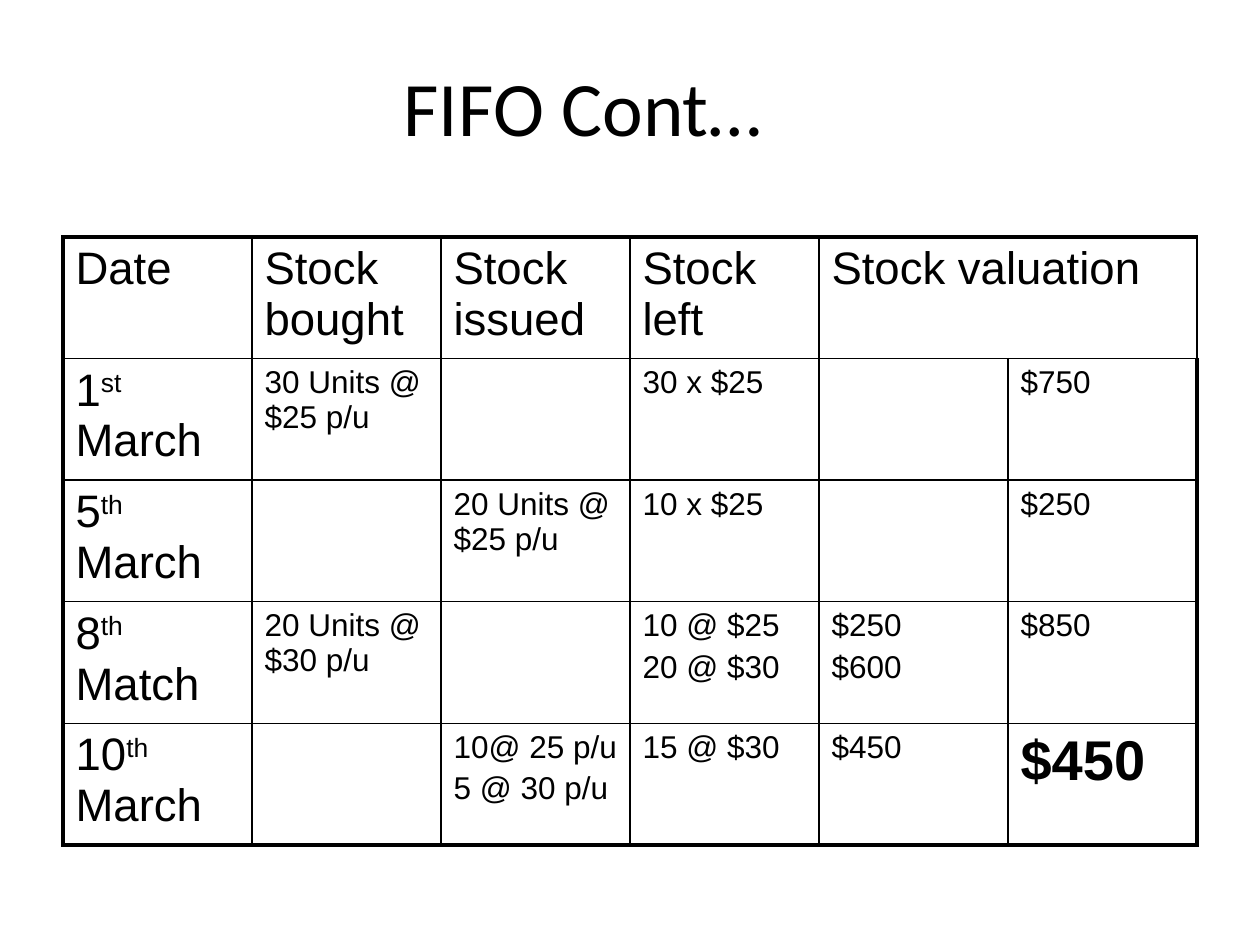
"""Build the FIFO stock valuation slide."""
from dataclasses import dataclass

from lxml.etree import SubElement
from pptx import Presentation
from pptx.dml.color import RGBColor
from pptx.enum.text import MSO_ANCHOR, PP_ALIGN
from pptx.oxml import parse_xml
from pptx.oxml.ns import nsdecls, qn
from pptx.table import Table, _Cell
from pptx.util import Cm, Pt

BLACK = RGBColor(0x00, 0x00, 0x00)
COLUMN_WIDTH = Cm(3.81)
ROW_HEIGHT = Cm(2.45)
OUTER_LINE = Pt(2.25)
INNER_LINE = Pt(1)
HEADING_SIZE = 26
HEADINGS = ["Date", "Stock bought", "Stock issued", "Stock left", "Stock valuation", ""]


@dataclass(frozen=True)
class StockEntry:
    day: str
    suffix: str
    month: str
    bought: str = ""
    issued: str = ""
    left: str = ""
    subtotals: str = ""
    total: str = ""


ENTRIES = [
    StockEntry("1", "st", "March", bought="30 Units @ $25 p/u", left="30 x $25", total="$750"),
    StockEntry("5", "th", "March", issued="20 Units @ $25 p/u", left="10 x $25", total="$250"),
    StockEntry("8", "th", "Match", bought="20 Units @ $30 p/u", left="10 @ $25\n20 @ $30",
               subtotals="$250\n$600", total="$850"),
    StockEntry("10", "th", "March", issued="10@ 25 p/u\n5 @ 30 p/u", left="15 @ $30",
               subtotals="$450", total="$450"),
]


def add_span(para, text: str, *, size: float = 18, font: str = "Arial",
             bold: bool = False, baseline: int = 0) -> None:
    span = para.add_run()
    span.text = text
    span.font.name = font
    span.font.size = Pt(size)
    span.font.bold = bold
    span.font.color.rgb = BLACK
    if baseline:
        span.font._element.set("baseline", str(baseline * 1000))


def space_before(para, percent: int) -> None:
    spacing = SubElement(para._p.get_or_add_pPr(), qn("a:spcBef"))
    SubElement(spacing, qn("a:spcPct")).set("val", str(percent * 1000))


def write_cell(cell: _Cell, text: str, size: float = 18, bold: bool = False) -> None:
    if not text:
        return
    frame = cell.text_frame
    for index, line in enumerate(text.split("\n")):
        para = frame.add_paragraph() if index else frame.paragraphs[0]
        space_before(para, 20)
        add_span(para, line, size=size, bold=bold)


def write_date(cell: _Cell, entry: StockEntry) -> None:
    para = cell.text_frame.paragraphs[0]
    space_before(para, 20)
    add_span(para, entry.day, size=HEADING_SIZE)
    add_span(para, entry.suffix, size=HEADING_SIZE, baseline=30)
    add_span(para, f" {entry.month}", size=HEADING_SIZE)


def draw_borders(table: Table) -> None:
    last_row, last_column = len(table.rows) - 1, len(table.columns) - 1
    for row in range(last_row + 1):
        for column in range(last_column + 1):
            cell = table.cell(row, column)
            cell.fill.background()
            outer_sides = {"L": column == 0, "R": column == last_column,
                           "T": row == 0, "B": row == last_row}
            for index, (side, is_outer) in enumerate(outer_sides.items()):
                width = OUTER_LINE if is_outer else INNER_LINE
                border = parse_xml(
                    f'<a:ln{side} {nsdecls("a")} w="{int(width)}"><a:solidFill>'
                    f'<a:srgbClr val="{BLACK}"/></a:solidFill></a:ln{side}>')
                cell._tc.get_or_add_tcPr().insert(index, border)


def add_stock_table(page) -> None:
    row_count, column_count = len(ENTRIES) + 1, len(HEADINGS)
    table = page.shapes.add_table(row_count, column_count, Cm(1.27), Cm(4.78),
                                  COLUMN_WIDTH * column_count, ROW_HEIGHT * row_count).table
    table.first_row = table.horz_banding = False
    for column in table.columns:
        column.width = COLUMN_WIDTH
    for row in table.rows:
        row.height = ROW_HEIGHT
    draw_borders(table)
    table.cell(0, 4).merge(table.cell(0, 5))
    for column, heading in enumerate(HEADINGS):
        write_cell(table.cell(0, column), heading, size=HEADING_SIZE)
    for row, entry in enumerate(ENTRIES, start=1):
        write_date(table.cell(row, 0), entry)
        texts = (entry.bought, entry.issued, entry.left, entry.subtotals)
        for column, text in enumerate(texts, start=1):
            write_cell(table.cell(row, column), text)
        is_final = entry is ENTRIES[-1]
        write_cell(table.cell(row, 5), entry.total, size=32 if is_final else 18, bold=is_final)


def add_title(page, text: str) -> None:
    box = page.shapes.title
    box.left, box.top, box.width, box.height = Cm(1.27), Cm(0.33), Cm(20.96), Cm(3.61)
    box.text_frame.vertical_anchor = MSO_ANCHOR.MIDDLE
    para = box.text_frame.paragraphs[0]
    para.alignment = PP_ALIGN.CENTER
    add_span(para, text, size=44, font="Calibri")


def main() -> None:
    deck = Presentation()
    deck.slide_width, deck.slide_height = Cm(25.4), Cm(19.05)
    page = deck.slides.add_slide(deck.slide_layouts[5])
    add_title(page, "FIFO Cont…")
    add_stock_table(page)
    deck.save("out.pptx")


if __name__ == "__main__":
    main()
